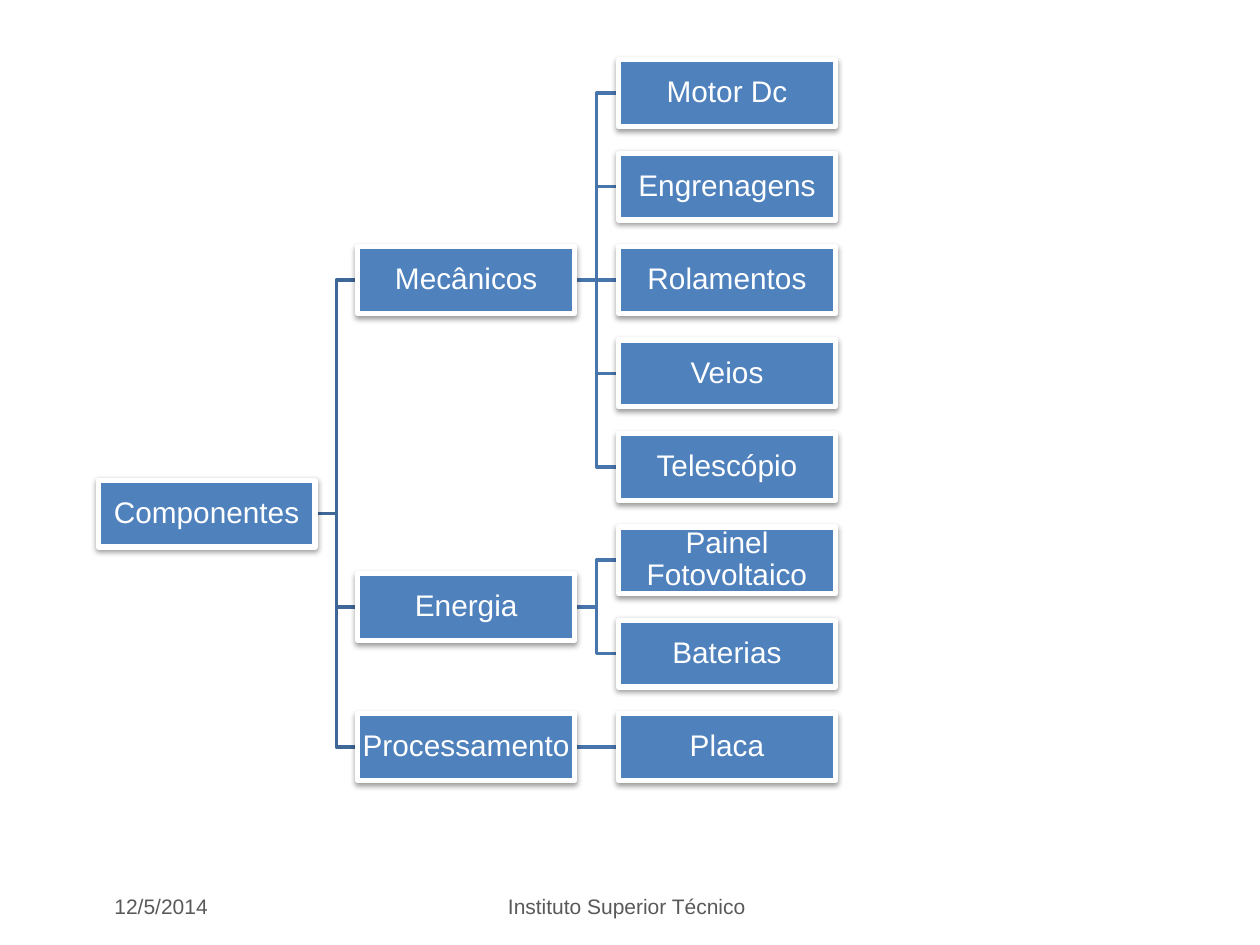
from lxml.etree import SubElement
from pptx import Presentation
from pptx.dml.color import RGBColor
from pptx.enum.shapes import MSO_CONNECTOR, MSO_SHAPE
from pptx.enum.text import MSO_ANCHOR, PP_ALIGN
from pptx.oxml import parse_xml
from pptx.oxml.ns import nsdecls, qn
from pptx.util import Inches, Pt

COLOURS = {
    "box": "4F81BD",
    "white": "FFFFFF",
    "footer": "595959",
    "root_link": "3F6797",
    "branch_link": "4875AC",
}
BRANCHES = {
    "Mecânicos": ["Motor Dc", "Engrenagens", "Rolamentos", "Veios", "Telescópio"],
    "Energia": ["Painel Fotovoltaico", "Baterias"],
    "Processamento": ["Placa"],
}
COLUMNS = [0.78, 2.84, 4.91]
BOX_WIDTH, BOX_HEIGHT = 1.72, 0.53
FIRST_ROW, LAST_ROW = 0.74, 5.93
SHADOW = (
    f'<a:effectLst {nsdecls("a")}><a:outerShdw blurRad="40000" dist="20000" '
    'dir="5400000" rotWithShape="0"><a:srgbClr val="000000">'
    '<a:alpha val="38000"/></a:srgbClr></a:outerShdw></a:effectLst>'
)


def write_text(box, text, size, colour, alignment):
    box.text_frame.word_wrap = True
    box.text_frame.vertical_anchor = MSO_ANCHOR.MIDDLE
    para = box.text_frame.paragraphs[0]
    para.alignment = alignment
    span = para.add_run()
    span.text = text
    span.font.name = "Arial"
    span.font.size = Pt(size)
    span.font.color.rgb = RGBColor.from_string(COLOURS[colour])
    return para


deck = Presentation()
deck.slide_width, deck.slide_height = Inches(10), Inches(7.5)
page = deck.slides.add_slide(deck.slide_layouts[6])

footers = [
    ("12/5/2014", 0.81, 2.02, PP_ALIGN.LEFT),
    ("Instituto Superior Técnico", 3.39, 3.17, PP_ALIGN.CENTER),
]
for text, left, width, alignment in footers:
    box = page.shapes.add_textbox(Inches(left), Inches(7.02), Inches(width), Inches(0.34))
    write_text(box, text, 12, "footer", alignment)

leaf_count = sum(len(leaves) for leaves in BRANCHES.values())
row_pitch = (LAST_ROW - FIRST_ROW) / (leaf_count - 1)
nodes = {}
links = []
row = 0
for branch, leaves in BRANCHES.items():
    for leaf in leaves:
        nodes[leaf] = (2, FIRST_ROW + row * row_pitch)
        links.append((branch, leaf))
        row += 1
    nodes[branch] = (1, (nodes[leaves[0]][1] + nodes[leaves[-1]][1]) / 2)
    links.append(("Componentes", branch))
nodes["Componentes"] = (0, (nodes["Mecânicos"][1] + nodes["Processamento"][1]) / 2)

connectors = []
for parent, child in links:
    parent_column, parent_middle = nodes[parent]
    child_column, child_middle = nodes[child]
    level = abs(parent_middle - child_middle) < 0.01
    connector = page.shapes.add_connector(
        MSO_CONNECTOR.STRAIGHT if level else MSO_CONNECTOR.ELBOW,
        Inches(COLUMNS[parent_column] + BOX_WIDTH), Inches(parent_middle),
        Inches(COLUMNS[child_column]), Inches(child_middle),
    )
    link_colour = "branch_link" if parent_column else "root_link"
    connector.line.color.rgb = RGBColor.from_string(COLOURS[link_colour])
    connector.line.width = Pt(2)
    SubElement(connector._element.spPr, qn("a:effectLst"))
    connectors.append((connector, parent, child))

boxes = {}
for text, (column, middle) in nodes.items():
    box = page.shapes.add_shape(
        MSO_SHAPE.RECTANGLE,
        Inches(COLUMNS[column]), Inches(middle - BOX_HEIGHT / 2),
        Inches(BOX_WIDTH), Inches(BOX_HEIGHT),
    )
    box.fill.solid()
    box.fill.fore_color.rgb = RGBColor.from_string(COLOURS["box"])
    box.line.color.rgb = RGBColor.from_string(COLOURS["white"])
    box.line.width = Pt(3)
    box._element.spPr.append(parse_xml(SHADOW))
    frame = box.text_frame
    frame.margin_left = frame.margin_right = Inches(0.01)
    frame.margin_top = frame.margin_bottom = Inches(0.01)
    para = write_text(box, text, 17, "white", PP_ALIGN.CENTER)
    para.line_spacing = 0.9
    boxes[text] = box

for connector, parent, child in connectors:
    connector.begin_connect(boxes[parent], 3)
    connector.end_connect(boxes[child], 1)

deck.save("out.pptx")
